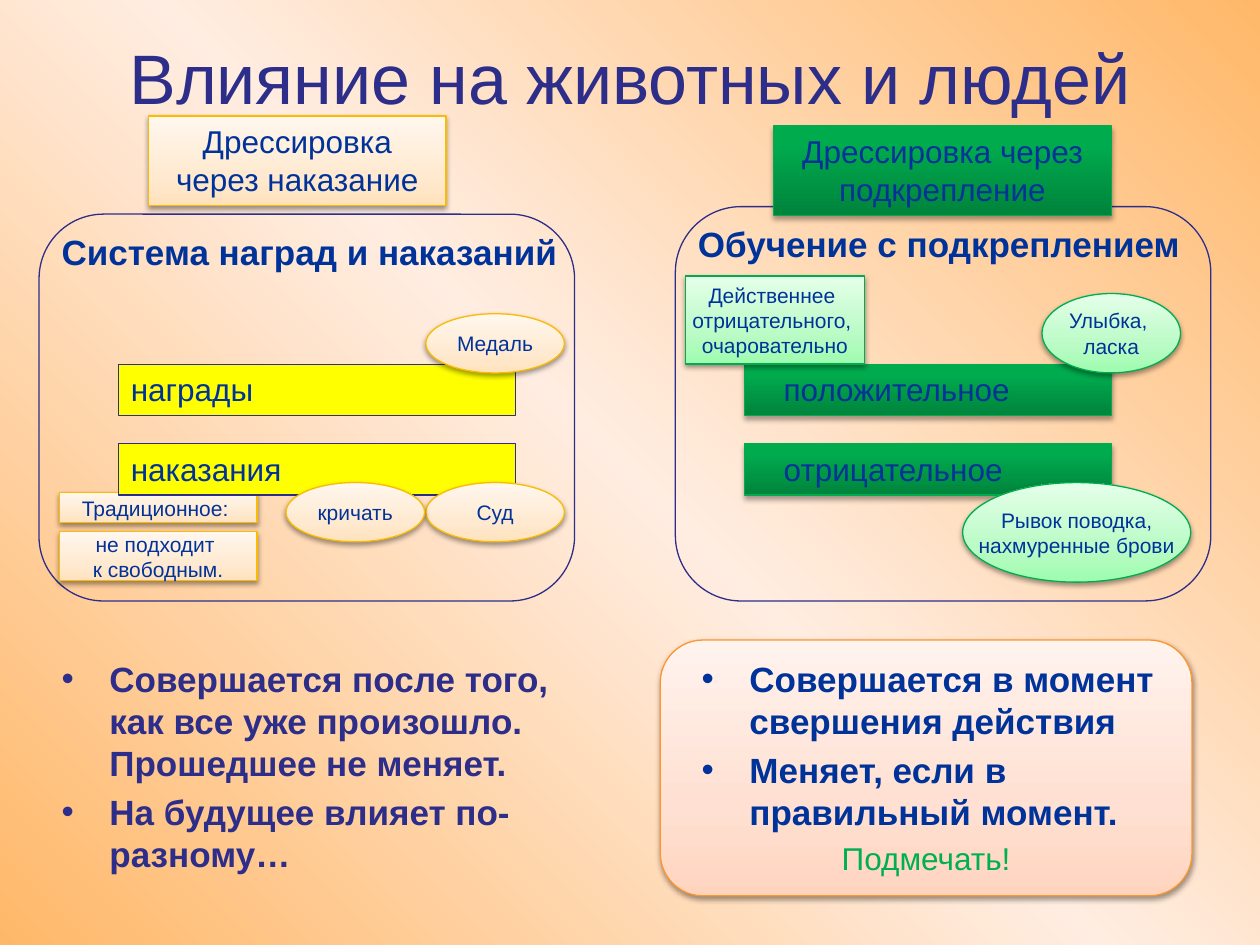
from pptx import Presentation
from pptx.dml.color import RGBColor
from pptx.enum.shapes import MSO_SHAPE
from pptx.enum.text import MSO_ANCHOR, MSO_AUTO_SIZE, PP_ALIGN
from pptx.oxml import parse_xml
from pptx.oxml.ns import nsdecls, qn
from pptx.util import Inches, Pt

INDIGO = RGBColor(0x2D, 0x2D, 0x8A)
BLUE = RGBColor(0x00, 0x33, 0x99)
GREEN = RGBColor(0x00, 0xB0, 0x50)
EMERALD = RGBColor(0x00, 0xAC, 0x4E)
AMBER = RGBColor(0xF9, 0xBC, 0x00)
ORANGE = RGBColor(0xFE, 0x96, 0x2D)
YELLOW = RGBColor(0xFF, 0xFF, 0x00)

BACKDROP = [(0, "FFB869"), (50, "FFEDE1"), (100, "FFB869")]
PEACH = [(0, "FFD4BF"), (35, "FFE0D2"), (100, "FFF3EE")]
CREAM = [(0, "FFE2BD"), (35, "FFEAD1"), (100, "FFF7EE")]
MINT = [(0, "9DFCAE"), (35, "BBFBC6"), (100, "E4FFE9")]
LEAF = [(0, "00833C"), (80, "00AB4E"), (100, "00AB4E")]

RECT, OVAL, ROUND = MSO_SHAPE.RECTANGLE, MSO_SHAPE.OVAL, MSO_SHAPE.ROUNDED_RECTANGLE
TOP, MIDDLE, BOTTOM = MSO_ANCHOR.TOP, MSO_ANCHOR.MIDDLE, MSO_ANCHOR.BOTTOM
LEFT, CENTER = PP_ALIGN.LEFT, PP_ALIGN.CENTER

NOTE = dict(size=12, anchor=MIDDLE, wrap=False, align=CENTER)
HEAD = dict(size=18, align=CENTER)
BOLD = dict(size=20, bold=True)
CREAM_LOOK = dict(fill=CREAM, line=AMBER, shadow=(38, 1.6))
MINT_LOOK = dict(fill=MINT, line=EMERALD, shadow=(38, 1.6))
LEAF_LOOK = dict(fill=LEAF, line=EMERALD, shadow=(35, 1.8))
STYLES = {
    "panel": dict(geom=ROUND, line=INDIGO),
    "summary": dict(HEAD, geom=ROUND, fill=PEACH, line=ORANGE, shadow=(38, 1.6),
                    anchor=BOTTOM, color=GREEN),
    "green bar": dict(LEAF_LOOK, geom=RECT, size=18, inset=0.31),
    "yellow bar": dict(geom=RECT, fill=YELLOW, line=INDIGO, size=18),
    "green head": dict(LEAF_LOOK, **HEAD, geom=RECT),
    "cream head": dict(CREAM_LOOK, **HEAD, geom=RECT),
    "green oval": dict(MINT_LOOK, **NOTE, geom=OVAL),
    "green note": dict(MINT_LOOK, **NOTE, geom=RECT),
    "cream oval": dict(CREAM_LOOK, **NOTE, geom=OVAL),
    "cream note": dict(CREAM_LOOK, **NOTE, geom=RECT),
    "caption": dict(BOLD, wrap=False),
    "blue bullets": dict(BOLD, bullet=True),
    "indigo bullets": dict(BOLD, bullet=True, color=INDIGO),
}

TITLE = "Влияние на животных и людей"
BAR_TOP, BAR_STEP, BAR_H = 2.89, 0.63, 0.41
OVAL_W, OVAL_H = 1.1, 0.47
OVAL_X, OVAL_Y = 3.38, 3.83


def bars(style, left, width, labels):
    return [(style, (left, BAR_TOP + i * BAR_STEP, width, BAR_H), [label])
            for i, label in enumerate(labels)]


ITEMS = [
    ("summary", (5.24, 5.08, 4.22, 2.03), ["Подмечать!"]),
    ("panel", (5.36, 1.64, 4.25, 3.13), []),
    *bars("green bar", 5.91, 2.91, ["положительное", "отрицательное"]),
    ("caption", (5.44, 1.72, 4.04, 0.43), ["Обучение с подкреплением"]),
    ("blue bullets", (5.47, 5.17, 4.14, 1.65),
     ["Совершается в момент свершения действия", "Меняет, если в правильный момент."]),
    ("green oval", (8.27, 2.33, OVAL_W, 0.63), ["Улыбка, ", "ласка"]),
    ("green oval", (7.64, OVAL_Y, 1.81, 0.79), ["Рывок поводка,", "нахмуренные брови"]),
    ("green note", (5.44, 2.19, 1.42, 0.7),
     ["Действеннее ", "отрицательного, \vочаровательно"]),
    ("green head", (6.14, 1, 2.68, 0.71), ["Дрессировка через подкрепление"]),
    ("indigo bullets", (0.39, 5.17, 4.42, 1.89),
     ["Совершается после того, как все уже произошло. Прошедшее не меняет.",
      "На будущее влияет по-разному…"]),
    ("cream note", (0.47, 3.91, 1.57, 0.24), ["Традиционное: "]),
    ("cream head", (1.18, 0.92, 2.36, 0.71), ["Дрессировка через наказание"]),
    ("caption", (0.39, 1.78, 4.14, 0.43), ["Система наград и наказаний"]),
    ("panel", (0.31, 1.7, 4.25, 3.07), []),
    *bars("yellow bar", 0.94, 3.15, ["награды", "наказания"]),
    ("cream oval", (OVAL_X, OVAL_Y, OVAL_W, OVAL_H), ["Суд"]),
    ("cream oval", (OVAL_X, 2.49, OVAL_W, OVAL_H), ["Медаль"]),
    ("cream note", (0.47, 4.22, 1.57, 0.39), ["не подходит ", "к свободным."]),
    ("cream oval", (OVAL_X - OVAL_W - 0.01, OVAL_Y, OVAL_W, OVAL_H), ["кричать"]),
]


def assign(obj, values):
    for name, value in values.items():
        setattr(obj, name, value)


def paint_gradient(fill, owner, stops, angle):
    fill.gradient()
    fill.gradient_angle = angle
    gs_list = next(owner.iter(qn("a:gsLst")))
    for gs in list(gs_list):
        gs_list.remove(gs)
    for pos, color in stops:
        gs_list.append(parse_xml(
            f'<a:gs {nsdecls("a")} pos="{pos * 1000}"><a:srgbClr val="{color}"/></a:gs>'))


def add_shadow(sp, alpha, dist):
    sp._element.spPr.find(qn("a:effectLst")).append(parse_xml(
        f'<a:outerShdw {nsdecls("a")} blurRad="{Pt(3.1)}" dist="{Pt(dist)}" dir="5400000" '
        f'rotWithShape="0"><a:srgbClr val="000000"><a:alpha val="{alpha * 1000}"/>'
        '</a:srgbClr></a:outerShdw>'))


def add_bullet(p):
    pPr = p._p.get_or_add_pPr()
    pPr.set("marL", str(Inches(0.38)))
    pPr.set("indent", str(-Inches(0.38)))
    pPr.append(parse_xml(f'<a:buFont {nsdecls("a")} typeface="Arial"/>'))
    pPr.append(parse_xml(f'<a:buChar {nsdecls("a")} char="•"/>'))


def format_runs(p, size, color, bold=False):
    for r in p.runs:
        assign(r.font, dict(name="Arial", size=Pt(size), bold=bold))
        r.font.color.rgb = color


def write(tf, lines, style):
    assign(tf, dict(word_wrap=style.get("wrap", True), auto_size=MSO_AUTO_SIZE.NONE,
                    vertical_anchor=style.get("anchor", TOP),
                    margin_left=Inches(style.get("inset", 0.1))))
    for i, line in enumerate(lines):
        p = tf.add_paragraph() if i else tf.paragraphs[0]
        assign(p, dict(text=line, alignment=style.get("align", LEFT)))
        if style.get("bullet"):
            p.space_before = Pt(4 if i else 0)
            add_bullet(p)
        format_runs(p, style["size"], style.get("color", BLUE), style.get("bold", False))


def add_item(s, style, box, lines):
    frame = [Inches(v) for v in box]
    if "geom" not in style:
        write(s.shapes.add_textbox(*frame).text_frame, lines, style)
        return
    sp = s.shapes.add_shape(style["geom"], *frame)
    sp.shadow.inherit = False
    fill = style.get("fill")
    if fill is None:
        sp.fill.background()
    elif isinstance(fill, list):
        paint_gradient(sp.fill, sp._element, fill, 90)
    else:
        sp.fill.solid()
        sp.fill.fore_color.rgb = fill
    sp.line.color.rgb = style["line"]
    sp.line.width = Pt(0.75)
    if "shadow" in style:
        add_shadow(sp, *style["shadow"])
    if lines:
        write(sp.text_frame, lines, style)


def main():
    prs = Presentation()
    assign(prs, dict(slide_width=Inches(10), slide_height=Inches(7.5)))
    s = prs.slides.add_slide(prs.slide_layouts[5])
    paint_gradient(s.background.fill, s._element, BACKDROP, 45)
    title = s.shapes.title
    assign(title, dict(left=Inches(0.5), top=Inches(0.3), width=Inches(9), height=Inches(0.61)))
    write(title.text_frame, [TITLE],
          dict(size=40, color=INDIGO, anchor=MIDDLE, align=CENTER))
    for name, box, lines in ITEMS:
        add_item(s, STYLES[name], box, lines)
    prs.save("out.pptx")


if __name__ == "__main__":
    main()
